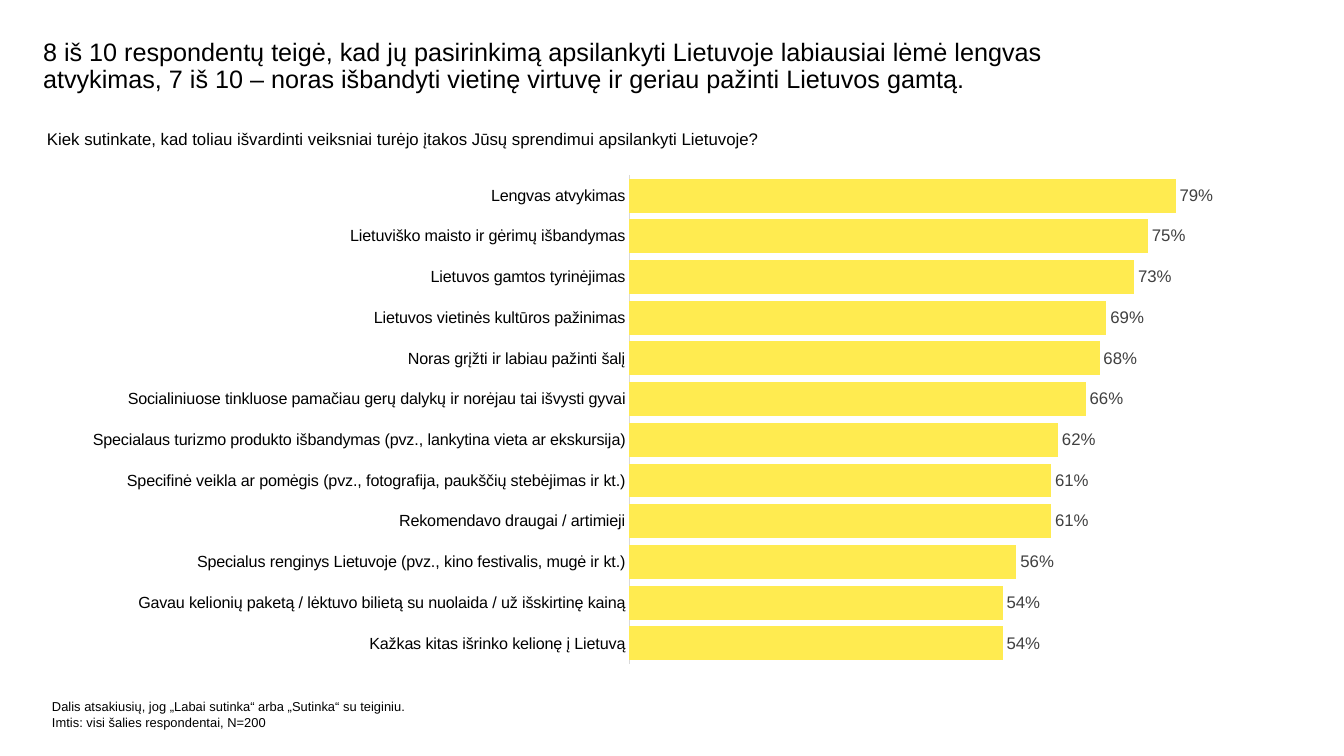
from lxml.etree import SubElement
from pptx import Presentation
from pptx.chart.data import CategoryChartData
from pptx.dml.color import RGBColor
from pptx.enum.chart import XL_CHART_TYPE, XL_LABEL_POSITION, XL_TICK_MARK
from pptx.enum.text import MSO_ANCHOR
from pptx.oxml.ns import qn
from pptx.util import Emu, Pt

FONT = "Arial"
BLACK = RGBColor(0x00, 0x00, 0x00)
GREY = RGBColor(0x40, 0x40, 0x40)
LIGHT_GREY = RGBColor(0xD9, 0xD9, 0xD9)
YELLOW = RGBColor(0xFF, 0xEB, 0x50)

HEADLINE = (
    "8 iš 10 respondentų teigė, kad jų pasirinkimą apsilankyti Lietuvoje labiausiai "
    "lėmė lengvas atvykimas, 7 iš 10 – noras išbandyti vietinę virtuvę ir geriau "
    "pažinti Lietuvos gamtą."
)
QUESTION = (
    "Kiek sutinkate, kad toliau išvardinti veiksniai turėjo įtakos Jūsų sprendimui "
    "apsilankyti Lietuvoje?"
)
FOOTNOTES = [
    "Dalis atsakiusių, jog „Labai sutinka“ arba „Sutinka“ su teiginiu.",
    "Imtis: visi šalies respondentai, N=200",
]
# Listed from the bottom bar to the top bar
FACTORS = [
    ("Kažkas kitas išrinko kelionę į Lietuvą", 0.54),
    ("Gavau kelionių paketą / lėktuvo bilietą su nuolaida / už išskirtinę kainą", 0.54),
    ("Specialus renginys Lietuvoje (pvz., kino festivalis, mugė ir kt.)", 0.56),
    ("Rekomendavo draugai / artimieji", 0.61),
    ("Specifinė veikla ar pomėgis (pvz., fotografija, paukščių stebėjimas ir kt.)", 0.61),
    ("Specialaus turizmo produkto išbandymas (pvz., lankytina vieta ar ekskursija)", 0.62),
    ("Socialiniuose tinkluose pamačiau gerų dalykų ir norėjau tai išvysti gyvai", 0.66),
    ("Noras grįžti ir labiau pažinti šalį", 0.68),
    ("Lietuvos vietinės kultūros pažinimas", 0.69),
    ("Lietuvos gamtos tyrinėjimas", 0.73),
    ("Lietuviško maisto ir gėrimų išbandymas", 0.75),
    ("Lengvas atvykimas", 0.79),
]


def px(length):
    return Emu(round(length * 914400 / 100.8))


def set_font(font, size, color=BLACK):
    font.name = FONT
    font.size = Pt(size)
    font.color.rgb = color


def add_text(slide, left, top, width, height, lines, size, line_spacing=None):
    frame = slide.shapes.add_textbox(px(left), px(top), px(width), px(height)).text_frame
    frame.word_wrap = True
    frame.vertical_anchor = MSO_ANCHOR.TOP
    frame.margin_left = frame.margin_right = 0
    frame.margin_top = frame.margin_bottom = 0
    frame.text = "\n".join(lines)
    for paragraph in frame.paragraphs:
        set_font(paragraph.font, size)
        paragraph.line_spacing = line_spacing


def place_plot(chart, x, y, w, h):
    """Fix the inner plot area, as shares of the chart frame."""
    plot_area = chart.plots[0]._element.getparent()
    layout = plot_area.find(qn("c:layout"))
    if layout is None:
        layout = SubElement(plot_area, qn("c:layout"))
        plot_area.insert(0, layout)
    manual = SubElement(layout, qn("c:manualLayout"))
    settings = [("layoutTarget", "inner"), ("xMode", "edge"), ("yMode", "edge"),
                ("x", x), ("y", y), ("w", w), ("h", h)]
    for tag, value in settings:
        SubElement(manual, qn("c:" + tag)).set("val", str(value))


def add_factor_chart(slide, left, top, width, height):
    factors = CategoryChartData(number_format="0%")
    factors.categories = [name for name, share in FACTORS]
    factors.add_series("Series 1", [share for name, share in FACTORS])
    chart = slide.shapes.add_chart(
        XL_CHART_TYPE.BAR_CLUSTERED, px(left), px(top), px(width), px(height), factors
    ).chart
    chart.has_legend = False
    chart.has_title = False
    set_font(chart.font, 12)

    # Axes
    factor_axis = chart.category_axis
    factor_axis.major_tick_mark = XL_TICK_MARK.NONE
    factor_axis.has_major_gridlines = False
    factor_axis.format.line.color.rgb = LIGHT_GREY
    factor_axis.format.line.width = Pt(0.75)
    set_font(factor_axis.tick_labels.font, 11.5)
    share_axis = chart.value_axis
    share_axis.minimum_scale = 0
    share_axis.maximum_scale = 0.9
    share_axis.has_major_gridlines = False
    share_axis.tick_labels.number_format = "0%"
    share_axis.tick_labels.number_format_is_linked = False
    share_axis.visible = False

    # Bars and their labels
    bars = chart.plots[0]
    bars.gap_width = 20
    bars.vary_by_categories = False
    agreement = bars.series[0]
    agreement.format.fill.solid()
    agreement.format.fill.fore_color.rgb = YELLOW
    labels = agreement.data_labels
    labels.show_value = True
    labels.position = XL_LABEL_POSITION.OUTSIDE_END
    labels.number_format = "0%"
    labels.number_format_is_linked = False
    set_font(labels.font, 12, GREY)

    place_plot(chart, x=0.464, y=0.022, w=0.516, h=0.958)


def main():
    deck = Presentation()
    deck.slide_width, deck.slide_height = px(1344), px(756)
    slide = deck.slides.add_slide(deck.slide_layouts[6])

    # Headline and survey question
    add_text(slide, 43, 40, 1117, 60, [HEADLINE], 18, line_spacing=0.9)
    add_text(slide, 47, 129, 1199, 61, [QUESTION], 12)

    # Share of agreement by factor
    add_factor_chart(slide, 69, 164, 1207, 510)

    # Footnotes
    add_text(slide, 52, 699, 355, 40, FOOTNOTES, 9.2)

    deck.save("out.pptx")


if __name__ == "__main__":
    main()
